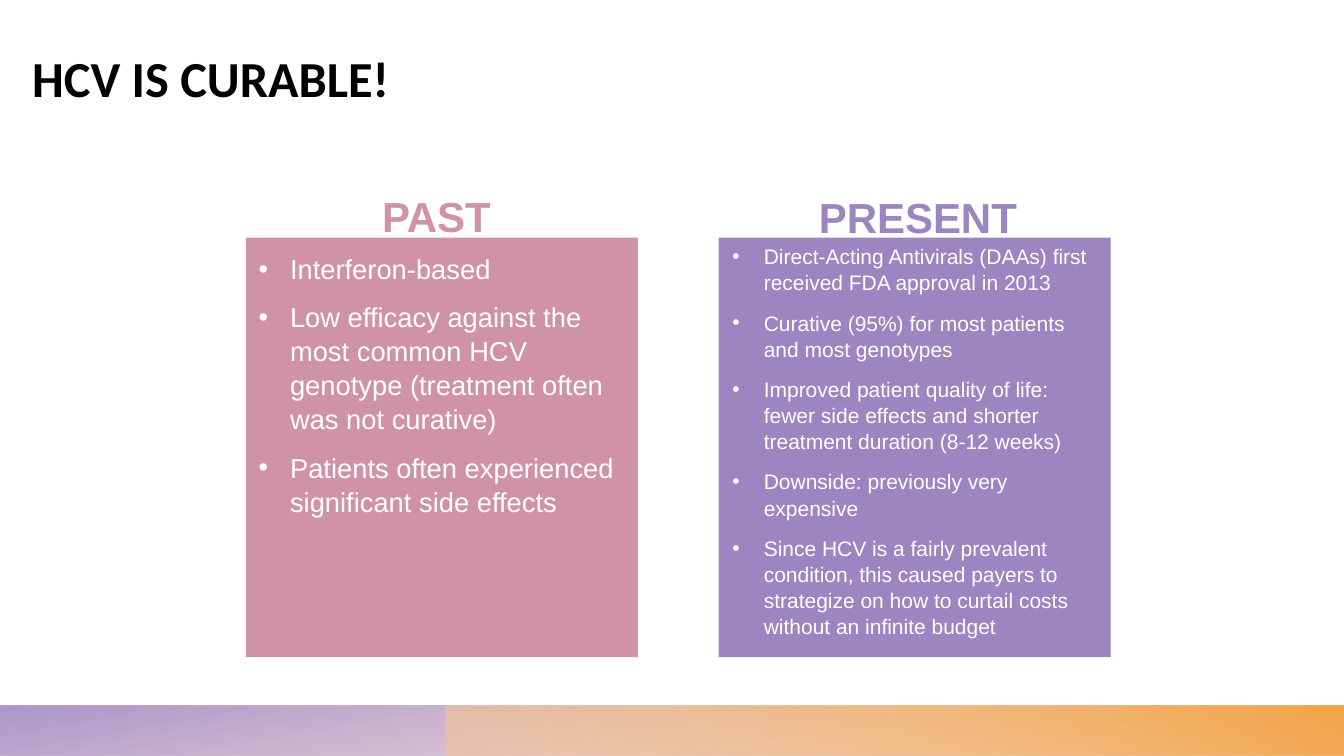
from lxml.etree import SubElement as Sub
from pptx import Presentation
from pptx.dml.color import RGBColor as RGB
from pptx.enum.shapes import MSO_SHAPE as Shape
from pptx.enum.text import MSO_ANCHOR as Anchor, PP_ALIGN as Align
from pptx.oxml.ns import qn
from pptx.util import Cm, Pt

PINK, PURPLE, WHITE = "D092A7", "9C85C0", "FFFFFF"

deck = Presentation()
deck.slide_width, deck.slide_height = Cm(33.87), Cm(19.05)
slide = deck.slides.add_slide(deck.slide_layouts[6])


def add_rect(left, top, width, height):
    rect = slide.shapes.add_shape(
        Shape.RECTANGLE, Cm(left), Cm(top), Cm(width), Cm(height))
    rect.shadow.inherit = False
    rect.line.fill.background()
    return rect


def add_text(box, lines, size, color, font="Arial", bold=False):
    """Add a wrapped text box with one paragraph per line."""
    frame = slide.shapes.add_textbox(*map(Cm, box)).text_frame
    frame.word_wrap = True
    frame.text = "\n".join(lines)
    for para in frame.paragraphs:
        face = para.runs[0].font
        face.name, face.size, face.bold = font, Pt(size), bold
        face.color.rgb = RGB.from_string(color)
    return frame


# Footer bands: left, width, rotation, angle, stops (percent, color, opacity)
bands = [
    (0, 33.87, 180, 100,
     [(0, PINK, 28), (14, PINK, 28), (100, PURPLE, 85)]),
    (11.22, 22.65, 0, 240,
     [(0, "F8C78E", 55), (9, "F8C78E", 55), (99, "F3A447", 100),
      (100, "F3A447", 100)]),
]
for left, width, turn, angle, stops in bands:
    band = add_rect(left, 17.78, width, 1.27)
    band.rotation = turn
    props = band._element.spPr
    props.find(qn("a:xfrm")).set("flipH", "1")
    band.fill.gradient()
    band.fill.gradient_angle = 360 - angle
    ramp = props.find(".//" + qn("a:gsLst"))
    for stop in list(ramp):
        ramp.remove(stop)
    for pos, color, alpha in stops:
        stop = Sub(ramp, qn("a:gs"), pos=str(pos * 1000))
        tint = Sub(stop, qn("a:srgbClr"), val=color)
        Sub(tint, qn("a:alpha"), val=str(alpha * 1000))

title = add_text((0.81, -0.71, 28.45, 3.43), ["HCV IS CURABLE!"],
                 36, "000000", "Calibri", True)
title.vertical_anchor = Anchor.BOTTOM
title.margin_left = title.margin_right = 0
title.margin_top = title.margin_bottom = 0

# Columns: panel left, color, heading, heading box, list box, size, points
columns = [
    (6.2, PINK, "PAST", (9.3, 4.67, 3.4, 1.55), (6.27, 6.2, 9.7, 7.65), 19.5, [
        "Interferon-based",
        "Low efficacy against the most common HCV genotype "
        "(treatment often was not curative)",
        "Patients often experienced significant side effects",
    ]),
    (18.11, PURPLE, "PRESENT", (20.24, 4.7, 5.79, 1.55),
     (18.21, 5.99, 9.7, 10.67), 15, [
        "Direct-Acting Antivirals (DAAs) first received FDA approval in 2013",
        "Curative (95%) for most patients and most genotypes",
        "Improved patient quality of life: fewer side effects and shorter "
        "treatment duration (8-12 weeks)",
        "Downside: previously very expensive",
        "Since HCV is a fairly prevalent condition, this caused payers to "
        "strategize on how to curtail costs without an infinite budget",
    ]),
]
for left, color, head, spot, box, size, points in columns:
    panel = add_rect(left, 5.99, 9.88, 10.57)
    panel.fill.solid()
    panel.fill.fore_color.rgb = RGB.from_string(color)
    label = add_text(spot, [head], 30, color, bold=True)
    label.paragraphs[0].alignment = Align.CENTER

    body = add_text(box, points, size, WHITE)
    for i, para in enumerate(body.paragraphs):
        para.line_spacing = 1.04
        para.space_before = Pt(10 if i else 0)
        props = para._p.get_or_add_pPr()
        props.set("marL", str(Cm(0.79)))
        props.set("indent", str(Cm(-0.79)))
        Sub(Sub(props, qn("a:buClr")), qn("a:srgbClr"), val=WHITE)
        Sub(props, qn("a:buFont"), typeface="Arial")
        Sub(props, qn("a:buChar"), char="•")
    body.paragraphs[-1].space_after = Pt(10)

deck.save("out.pptx")
